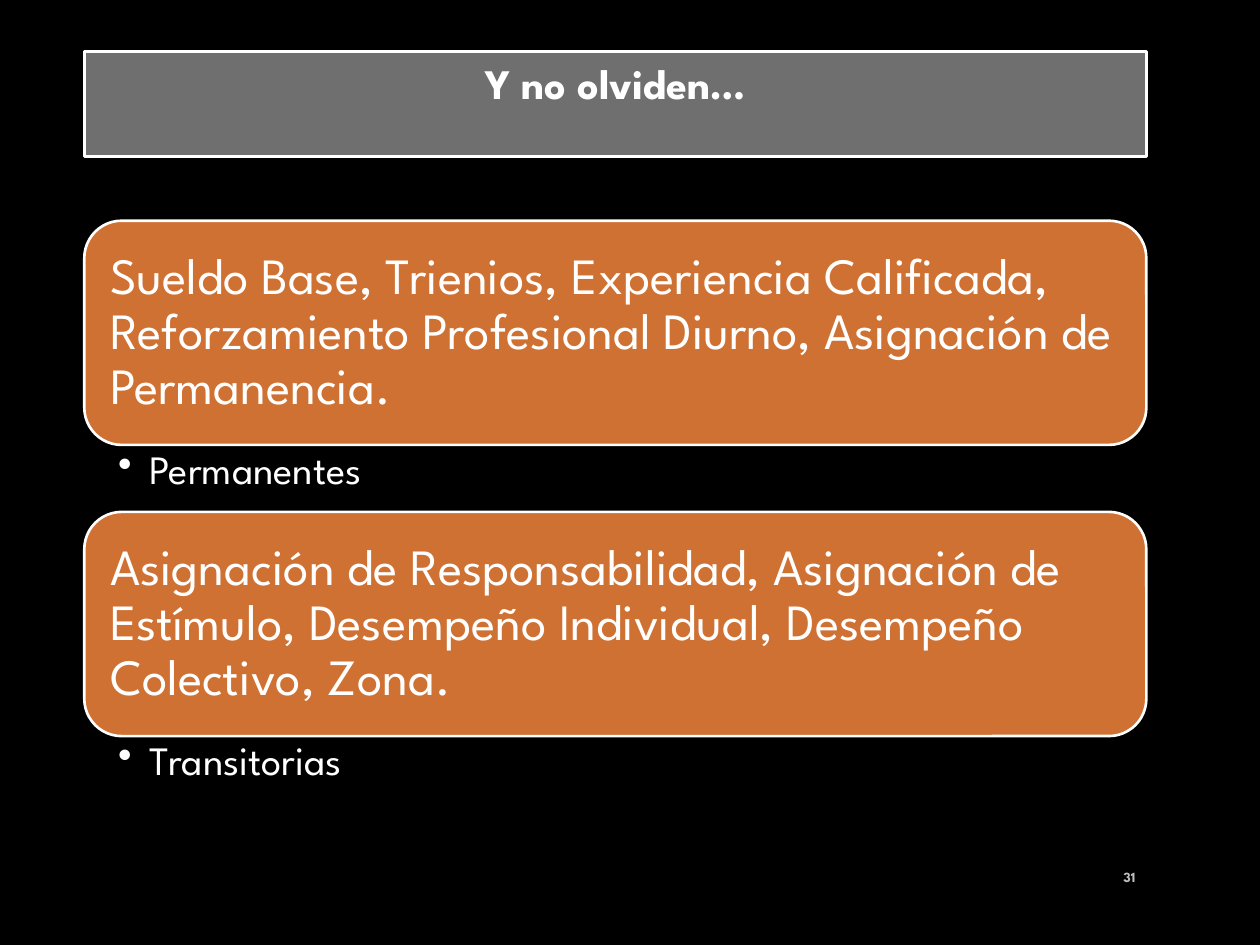
from dataclasses import dataclass

from lxml import etree
from pptx import Presentation
from pptx.dml.color import RGBColor
from pptx.enum.shapes import MSO_SHAPE
from pptx.enum.text import MSO_ANCHOR, MSO_AUTO_SIZE, PP_ALIGN
from pptx.oxml.ns import qn
from pptx.util import Cm, Pt

ROUND = MSO_SHAPE.ROUNDED_RECTANGLE
TOP, MIDDLE = MSO_ANCHOR.TOP, MSO_ANCHOR.MIDDLE
LEFT, CENTER, RIGHT = PP_ALIGN.LEFT, PP_ALIGN.CENTER, PP_ALIGN.RIGHT
GROW, FIXED = MSO_AUTO_SIZE.SHAPE_TO_FIT_TEXT, MSO_AUTO_SIZE.NONE

FONT = "League Spartan"
COLORS = {
    "back": "000000",
    "band": "6F6F6F",
    "card": "CF7133",
    "text": "FFFFFF",
    "page": "BFBFBF",
}
EDGE, WIDTH = Cm(1.7), Cm(21.41)
START, CARD, NOTE = Cm(4.45), Cm(4.52), Cm(1.35)
PAD = Cm(0.3)
CARD_FRAME = {
    "margin_left": PAD,
    "margin_right": PAD,
    "margin_top": PAD,
    "margin_bottom": PAD,
    "vertical_anchor": MIDDLE,
}
NOTE_FRAME = {
    "margin_left": Cm(0.68),
    "margin_right": Cm(0.58),
    "margin_top": Cm(0.1),
    "margin_bottom": Cm(0.1),
    "vertical_anchor": TOP,
}


@dataclass
class Group:
    items: str
    kind: str


GROUPS = [
    Group(
        "Sueldo Base, Trienios, Experiencia Calificada, Reforzamiento "
        "Profesional Diurno, Asignación de Permanencia.",
        "Permanentes",
    ),
    Group(
        "Asignación de Responsabilidad, Asignación de Estímulo, "
        "Desempeño Individual, Desempeño Colectivo, Zona.",
        "Transitorias",
    ),
]


def color(name: str) -> RGBColor:
    return RGBColor.from_string(COLORS[name])


def assign(target, values: dict) -> None:
    for name, value in values.items():
        setattr(target, name, value)


def paint(shape, fill: str, line: float) -> None:
    shape.shadow.inherit = False
    shape.fill.solid()
    shape.fill.fore_color.rgb = color(fill)
    shape.line.color.rgb = color("text")
    shape.line.width = Pt(line)


def write(shape, text: str, size: int, frame: dict, para: dict,
          bold: bool = False, ink: str = "text"):
    box = shape.text_frame
    assign(box, {"word_wrap": True, "auto_size": FIXED, **frame})
    line = box.paragraphs[0]
    assign(line, para)
    run = line.add_run()
    run.text = text
    assign(run.font, {"name": FONT, "size": Pt(size), "bold": bold})
    run.font.color.rgb = color(ink)
    return line


def bullet(line) -> None:
    props = line._p.get_or_add_pPr()
    props.set("marL", str(Cm(0.64)))
    props.set("indent", str(-Cm(0.64)))
    etree.SubElement(props, qn("a:buChar")).set("char", "•")


def draw(slide, group: Group, top: int) -> None:
    card = slide.shapes.add_shape(ROUND, EDGE, top, WIDTH, CARD)
    paint(card, "card", 1.5)
    para = {"alignment": LEFT, "line_spacing": 0.9}
    write(card, group.items, 29, CARD_FRAME, para)
    note = slide.shapes.add_textbox(EDGE, top + CARD, WIDTH, NOTE)
    bullet(write(note, group.kind, 23, NOTE_FRAME, {**para, "level": 1}))


def main() -> None:
    deck = Presentation()
    assign(deck, {"slide_width": Cm(25.4), "slide_height": Cm(19.05)})
    slide = deck.slides.add_slide(deck.slide_layouts[5])
    slide.background.fill.solid()
    slide.background.fill.fore_color.rgb = color("back")

    title = slide.shapes.title
    assign(title, {"left": EDGE, "top": Cm(1.04),
                   "width": WIDTH, "height": Cm(1.27)})
    paint(title, "band", 2)
    write(title, "Y no olviden…", 24,
          {"vertical_anchor": TOP, "auto_size": GROW},
          {"alignment": CENTER}, bold=True)

    for index, group in enumerate(GROUPS):
        draw(slide, group, START + index * (CARD + NOTE))

    page = slide.shapes.add_textbox(Cm(22), Cm(17.17), Cm(1.14), Cm(1.02))
    write(page, "31", 8, {"vertical_anchor": MIDDLE},
          {"alignment": RIGHT}, bold=True, ink="page")
    deck.save("out.pptx")


if __name__ == "__main__":
    main()
